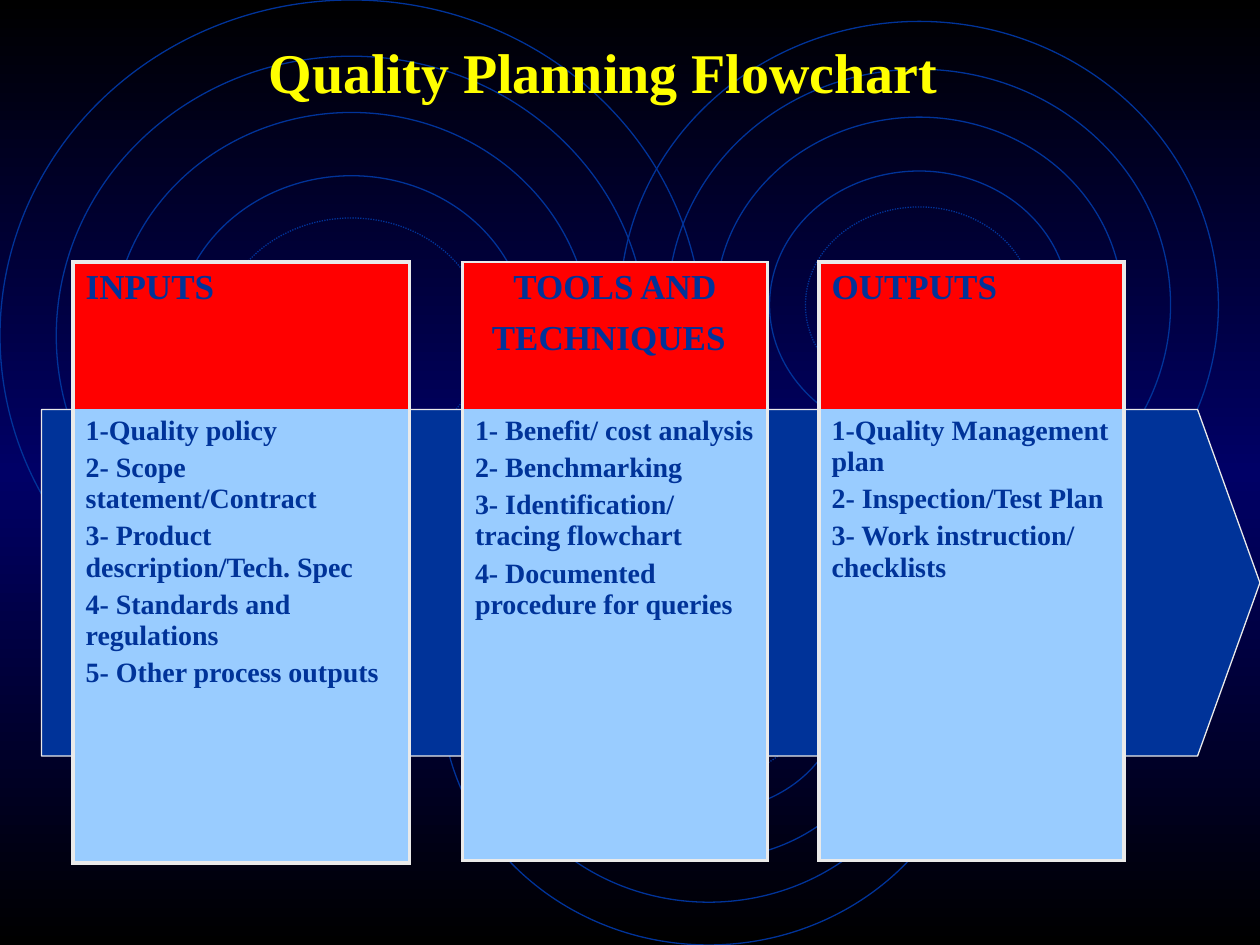
import copy

import lxml.etree
import pptx
import pptx.dml.color
import pptx.enum.dml
import pptx.enum.shapes
import pptx.enum.text
import pptx.oxml
import pptx.oxml.ns
import pptx.util

Inches = pptx.util.Inches
Pt = pptx.util.Pt
RGBColor = pptx.dml.color.RGBColor
SHAPES = pptx.enum.shapes.MSO_SHAPE
CENTER = pptx.enum.text.PP_ALIGN.CENTER

BLACK = RGBColor(0x00, 0x00, 0x00)
NAVY = RGBColor(0x00, 0x00, 0x66)
BLUE = RGBColor(0x00, 0x33, 0x99)
LIGHT_BLUE = RGBColor(0x99, 0xCC, 0xFF)
RED = RGBColor(0xFF, 0x00, 0x00)
YELLOW = RGBColor(0xFF, 0xFF, 0x00)
LIGHT_GRAY = RGBColor(0xEA, 0xEA, 0xEA)
FONT = "Times New Roman"


def add_run(paragraph, text, size, color, bold=True):
    run = paragraph.add_run()
    run.text = text
    font_format = {"name": FONT, "size": Pt(size), "bold": bold}
    for attribute, value in font_format.items():
        setattr(run.font, attribute, value)
    run.font.color.rgb = color


def set_borders(cell, widths):
    """Set left, right, top and bottom border widths in points; 0 hides one."""
    properties = cell._tc.get_or_add_tcPr()
    for side, width in zip("LRTB", widths):
        line = lxml.etree.SubElement(properties, pptx.oxml.ns.qn(f"a:ln{side}"))
        if not width:
            lxml.etree.SubElement(line, pptx.oxml.ns.qn("a:noFill"))
            continue
        line.set("w", str(Pt(width)))
        fill = lxml.etree.SubElement(line, pptx.oxml.ns.qn("a:solidFill"))
        color = lxml.etree.SubElement(fill, pptx.oxml.ns.qn("a:srgbClr"))
        color.set("val", str(LIGHT_GRAY))


presentation = pptx.Presentation()
presentation.slide_width = Inches(10)
presentation.slide_height = Inches(7.5)
slide = presentation.slides.add_slide(presentation.slide_layouts[6])

# Background gradient: black, navy, black from top to bottom
background = slide.background.fill
background.gradient()
background.gradient_angle = 270
stop_list = slide.element.xpath(".//a:gsLst")[0]
while len(stop_list) < 3:
    stop_list.append(copy.deepcopy(stop_list[0]))
for stop, position, color in zip(
    background.gradient_stops, (0, 0.5, 1), (BLACK, NAVY, BLACK)
):
    stop.position = position
    stop.color.rgb = color

# Concentric rings, each inset by a share of the outer width
RING_INSETS = (0, 0.08, 0.16, 0.25, 0.31)
for left, top, width, height in (
    (0, 0, 5.58, 5.33),
    (3.5, 3.5, 4.25, 4),
    (4.92, 0.17, 4.75, 4.5),
):
    for share in RING_INSETS:
        inset = width * share
        ring = slide.shapes.add_shape(
            SHAPES.OVAL,
            Inches(left + inset),
            Inches(top + inset),
            Inches(width - 2 * inset),
            Inches(height - 2 * inset),
        )
        ring.shadow.inherit = False
        ring.fill.background()
        ring.line.color.rgb = BLUE
        ring.line.width = Pt(0.75)
        if share == RING_INSETS[-1]:
            ring.line.dash_style = pptx.enum.dml.MSO_LINE.ROUND_DOT

# Arrow behind the tables
arrow = slide.shapes.add_shape(
    SHAPES.PENTAGON, Inches(0.33), Inches(3.25), Inches(9.67), Inches(2.75)
)
arrow.adjustments[0] = 0.18
arrow.shadow.inherit = False
arrow.fill.solid()
arrow.fill.fore_color.rgb = BLUE
arrow.line.color.rgb = LIGHT_GRAY
arrow.line.width = Pt(0.75)

# One table per stage: left, width, body height, top border, heading, items
STAGES = (
    (0.58, 2.67, 3.6, 2.25, "INPUTS", (
        "1-Quality policy",
        "2- Scope statement/Contract",
        "3- Product description/Tech. Spec",
        "4- Standards and regulations",
        "5- Other process outputs",
    )),
    (3.67, 2.42, 3.58, 1, "TOOLS AND TECHNIQUES", (
        "1- Benefit/ cost analysis",
        "2- Benchmarking",
        "3- Identification/ tracing flowchart",
        "4- Documented procedure for queries",
    )),
    (6.5, 2.42, 3.58, 2.25, "OUTPUTS", (
        "1-Quality Management plan",
        "2- Inspection/Test Plan",
        "3- Work instruction/ checklists",
    )),
)
HEADING_HEIGHT = 1.17
for left, width, body_height, top_border, heading, items in STAGES:
    table = slide.shapes.add_table(
        2, 1, Inches(left), Inches(2.08),
        Inches(width), Inches(HEADING_HEIGHT + body_height),
    ).table
    table.first_row = False
    table.horz_banding = False
    table.rows[0].height = Inches(HEADING_HEIGHT)
    table.rows[1].height = Inches(body_height)
    heading_cell, body_cell = table.cell(0, 0), table.cell(1, 0)

    set_borders(heading_cell, (2.25, 2.25, top_border, 0))
    set_borders(body_cell, (2.25, 2.25, 0, 2.25))
    for cell, color in ((heading_cell, RED), (body_cell, LIGHT_BLUE)):
        cell.fill.solid()
        cell.fill.fore_color.rgb = color

    paragraph = heading_cell.text_frame.paragraphs[0]
    add_run(paragraph, heading, 20, BLUE)
    if heading == "TOOLS AND TECHNIQUES":
        paragraph.alignment = CENTER
        add_run(paragraph, " ", 28, LIGHT_GRAY, bold=False)

    body = body_cell.text_frame
    for index, item in enumerate(items):
        paragraph = body.add_paragraph() if index else body.paragraphs[0]
        if index:
            paragraph.space_before = Pt(3.4)
        add_run(paragraph, item, 16, BLUE)

# Title
title = slide.shapes.add_textbox(
    Inches(0.5), Inches(0.25), Inches(8.58), Inches(0.63)
).text_frame
title.word_wrap = True
title.auto_size = pptx.enum.text.MSO_AUTO_SIZE.SHAPE_TO_FIT_TEXT
title.paragraphs[0].alignment = CENTER
add_run(title.paragraphs[0], "Quality Planning Flowchart", 32, YELLOW)

presentation.save("out.pptx")
